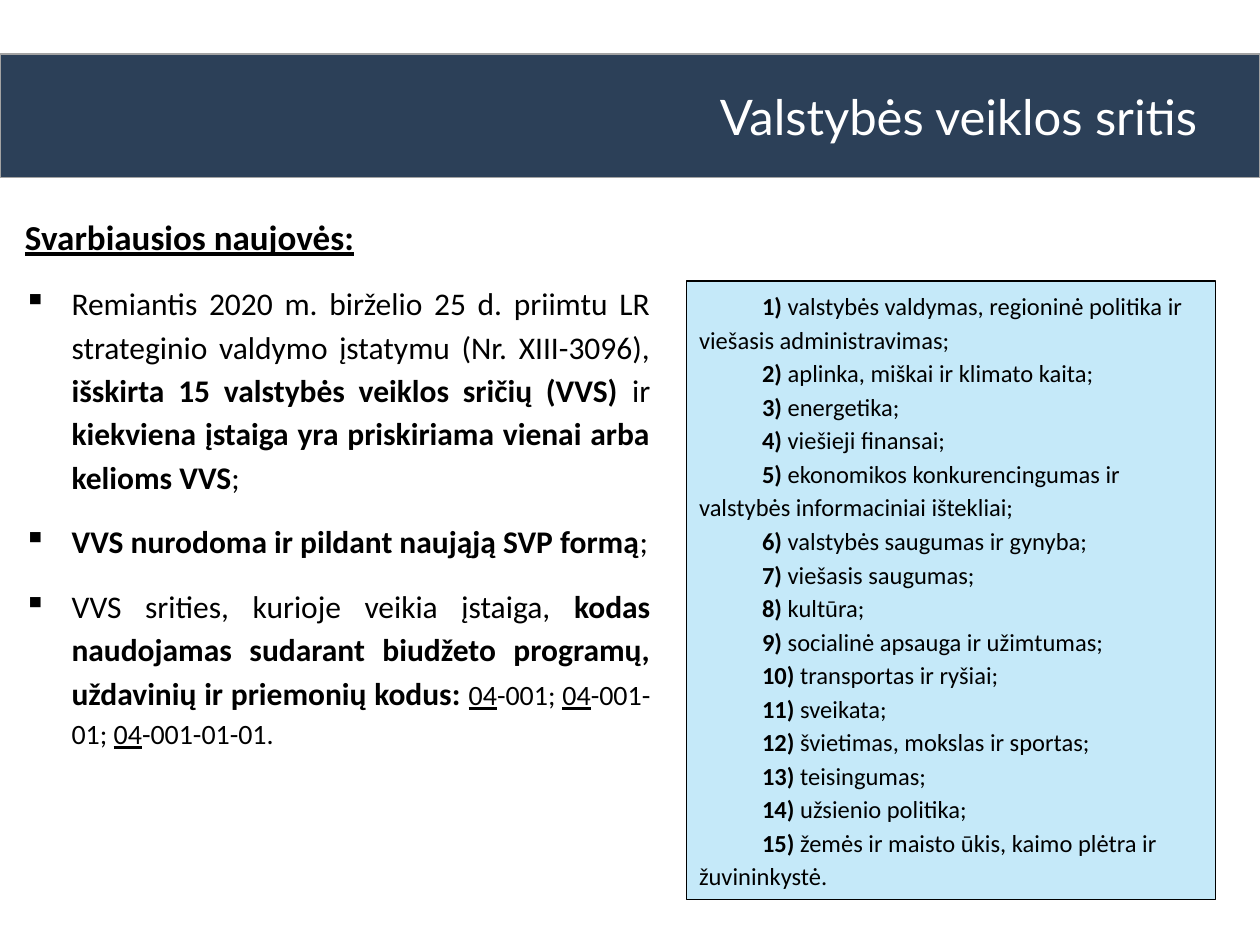
from lxml import etree
from pptx import Presentation
from pptx.dml.color import RGBColor
from pptx.enum import shapes, text
from pptx.oxml import ns
from pptx.util import Inches, Pt

ALIGN = text.PP_ALIGN

INTRO = [
    [("Remiantis 2020 m. birželio 25 d. priimtu LR strateginio valdymo įstatymu (Nr. XIII-3096), ", ""),
     ("išskirta 15 valstybės veiklos sričių (VVS)", "b"), (" ir ", ""),
     ("kiekviena įstaiga yra priskiriama vienai arba kelioms VVS", "b"), (";", "")],
    [("VVS nurodoma ir pildant naująją SVP formą", "b"), (";", "")],
    [("VVS srities, kurioje veikia įstaiga, ", ""),
     ("kodas naudojamas sudarant biudžeto programų, uždavinių ir priemonių kodus: ", "b"),
     ("04", "su"), ("-001; ", "s"), ("04", "su"), ("-001-01; ", "s"),
     ("04", "su"), ("-001-01-01.", "s")],
]

AREAS = [
    "valstybės valdymas, regioninė politika ir viešasis administravimas",
    "aplinka, miškai ir klimato kaita",
    "energetika",
    "viešieji finansai",
    "ekonomikos konkurencingumas ir valstybės informaciniai ištekliai",
    "valstybės saugumas ir gynyba",
    "viešasis saugumas",
    "kultūra",
    "socialinė apsauga ir užimtumas",
    "transportas ir ryšiai",
    "sveikata",
    "švietimas, mokslas ir sportas",
    "teisingumas",
    "užsienio politika",
    "žemės ir maisto ūkis, kaimo plėtra ir žuvininkystė",
]


def color(value):
    return RGBColor.from_string(value)


class SlideBuilder:
    body_font = "Calibri"
    title_font = "Lato"
    ink = "000000"
    navy = "2C4058"
    small = 16

    def __init__(self, page):
        self.page = page

    def rectangle(self, left, top, width, height, fill, line=None, line_width=1):
        box = self.page.shapes.add_shape(
            shapes.MSO_SHAPE.RECTANGLE, *map(Inches, (left, top, width, height)))
        box.shadow.inherit = False
        box.fill.solid()
        box.fill.fore_color.rgb = color(fill)
        if line:
            box.line.color.rgb = color(line)
            box.line.width = Pt(line_width)
        else:
            box.line.fill.background()
        return self.frame(box)

    def text_box(self, left, top, width, height):
        return self.frame(self.page.shapes.add_textbox(
            *map(Inches, (left, top, width, height))))

    def frame(self, box):
        frame = box.text_frame
        frame.word_wrap = True
        frame.vertical_anchor = text.MSO_ANCHOR.TOP
        return frame

    def paragraph(self, frame, spans, size, align=ALIGN.LEFT, font=body_font, ink=ink,
                  spacing=1.0, gap=0, margin=0, indent=0, bullet=None):
        """Add spans of (text, flags): b is bold, u underlined, s the small size."""
        first = frame.paragraphs[0]
        para = frame.add_paragraph() if first.runs else first
        para.alignment = align
        para.line_spacing = spacing
        para.space_before = para.space_after = Pt(gap)
        para.font.name = font
        para.font.size = Pt(size)
        para.font.color.rgb = color(ink)
        for words, flags in spans:
            span = para.add_run()
            span.text = words
            if "b" in flags:
                span.font.bold = True
            if "u" in flags:
                span.font.underline = True
            if "s" in flags:
                span.font.size = Pt(self.small)
        self.indent(para, margin, indent, bullet)

    def indent(self, para, margin, indent, bullet):
        props = para._p.get_or_add_pPr()
        props.set("marL", str(Inches(margin)))
        props.set("indent", str(Inches(indent)))
        if bullet:
            mark = etree.Element(ns.qn("a:buChar"), char=bullet)
            props.find(ns.qn("a:defRPr")).addprevious(mark)


def main():
    deck = Presentation()
    deck.slide_width, deck.slide_height = Inches(10), Inches(7.5)
    slide = SlideBuilder(deck.slides.add_slide(deck.slide_layouts[6]))

    slide.rectangle(0, 0.43, 10, 0.98, slide.navy, "A3A3A3")
    title = slide.rectangle(0.69, 0.64, 8.91, 0.59, slide.navy)
    slide.paragraph(title, [("Valstybės veiklos sritis", "")], 28, ALIGN.RIGHT,
                    slide.title_font, "FFFFFF")

    intro = slide.text_box(0, 1.61, 5.26, 4.42)
    slide.paragraph(intro, [("Svarbiausios naujovės:", "bu")], 20, ALIGN.JUSTIFY,
                    spacing=1.15, gap=6, margin=0.1)
    for spans in INTRO:
        slide.paragraph(intro, spans, 18, ALIGN.JUSTIFY, spacing=1.15, gap=6,
                        margin=0.47, indent=-0.38, bullet="▪")

    areas = slide.rectangle(5.45, 2.23, 4.2, 4.91, "C5E9F9", slide.ink, 0.75)
    for number, area in enumerate(AREAS, 1):
        end = "." if number == len(AREAS) else ";"
        slide.paragraph(areas, [(f"{number}) ", "b"), (area + end, "")], 14,
                        spacing=1.14, indent=0.5)

    deck.save("out.pptx")


if __name__ == "__main__":
    main()
